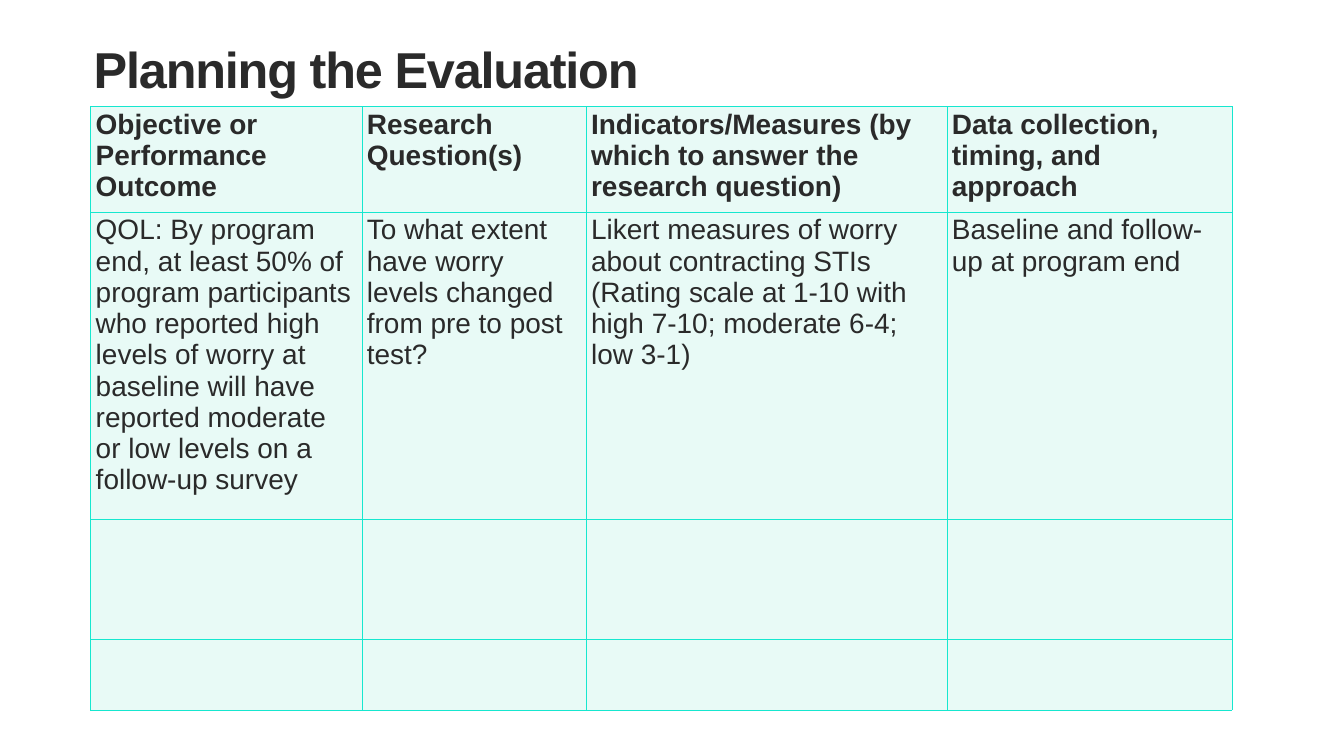
from lxml import etree
from pptx import Presentation
from pptx.enum.text import MSO_ANCHOR
from pptx.dml.color import RGBColor
from pptx.oxml.ns import qn
from pptx.util import Inches, Pt

COLORS = {"text": "2A2A2A", "fill": "E8FAF6", "border": "16E7CF"}
FONT = "Arial"
COLUMN_WIDTHS = [5.38, 4.45, 7.16, 5.66]
ROW_HEIGHTS = [1.34, 3.5, 2.38, 1.4]
PLAN = [
    [
        "Objective or Performance Outcome",
        "Research Question(s)",
        "Indicators/Measures (by which to answer the research question)",
        "Data collection, timing, and approach",
    ],
    [
        "QOL: By program end, at least 50% of program participants who reported "
        "high levels of worry at baseline will have reported moderate or low "
        "levels on a follow-up survey",
        "To what extent have worry levels changed from pre to post test?",
        "Likert measures of worry about contracting STIs (Rating scale at 1-10 "
        "with high 7-10; moderate 6-4; low 3-1)",
        "Baseline and follow-up at program end",
    ],
    [""] * 4,
    [""] * 4,
]


def color(name):
    return RGBColor.from_string(COLORS[name])


def format_font(font, size, bold):
    font.name = FONT
    font.size = Pt(size)
    font.bold = bold
    font.color.rgb = color("text")


def add_title(s, text):
    box = s.shapes.add_textbox(Inches(1.8), Inches(0.92), Inches(21.33), Inches(1.65))
    tf = box.text_frame
    tf.word_wrap = True
    tf.vertical_anchor = MSO_ANCHOR.TOP
    tf.margin_left = tf.margin_right = Inches(0.06)
    tf.margin_top = tf.margin_bottom = Inches(0.06)
    tf.text = text
    p = tf.paragraphs[0]
    p.line_spacing = 0.8
    r = p.runs[0]
    format_font(r.font, 72, True)
    r.font._element.set("spc", "-170")


def set_borders(cell):
    tc_pr = cell._tc.get_or_add_tcPr()
    for i, side in enumerate(("lnL", "lnR", "lnT", "lnB")):
        line = etree.Element(qn(f"a:{side}"), w=str(Pt(1)))
        fill = etree.SubElement(line, qn("a:solidFill"))
        etree.SubElement(fill, qn("a:srgbClr"), val=COLORS["border"])
        tc_pr.insert(i, line)


def fill_cell(cell, text, bold):
    cell.fill.solid()
    cell.fill.fore_color.rgb = color("fill")
    set_borders(cell)
    if text:
        cell.text_frame.text = text
        format_font(cell.text_frame.paragraphs[0].runs[0].font, 40, bold)


def add_plan_table(s):
    frame = s.shapes.add_table(
        len(ROW_HEIGHTS), len(COLUMN_WIDTHS), Inches(1.8), Inches(2.11),
        Inches(sum(COLUMN_WIDTHS)), Inches(sum(ROW_HEIGHTS)),
    )
    table = frame.table
    table.horz_banding = False
    for column, width in zip(table.columns, COLUMN_WIDTHS):
        column.width = Inches(width)
    for i, (row, height) in enumerate(zip(table.rows, ROW_HEIGHTS)):
        row.height = Inches(height)
        for cell, text in zip(row.cells, PLAN[i]):
            fill_cell(cell, text, bold=i == 0)


def main():
    prs = Presentation()
    prs.slide_width = Inches(26.67)
    prs.slide_height = Inches(15)
    s = prs.slides.add_slide(prs.slide_layouts[6])
    add_title(s, "Planning the Evaluation")
    add_plan_table(s)
    prs.save("out.pptx")


if __name__ == "__main__":
    main()
